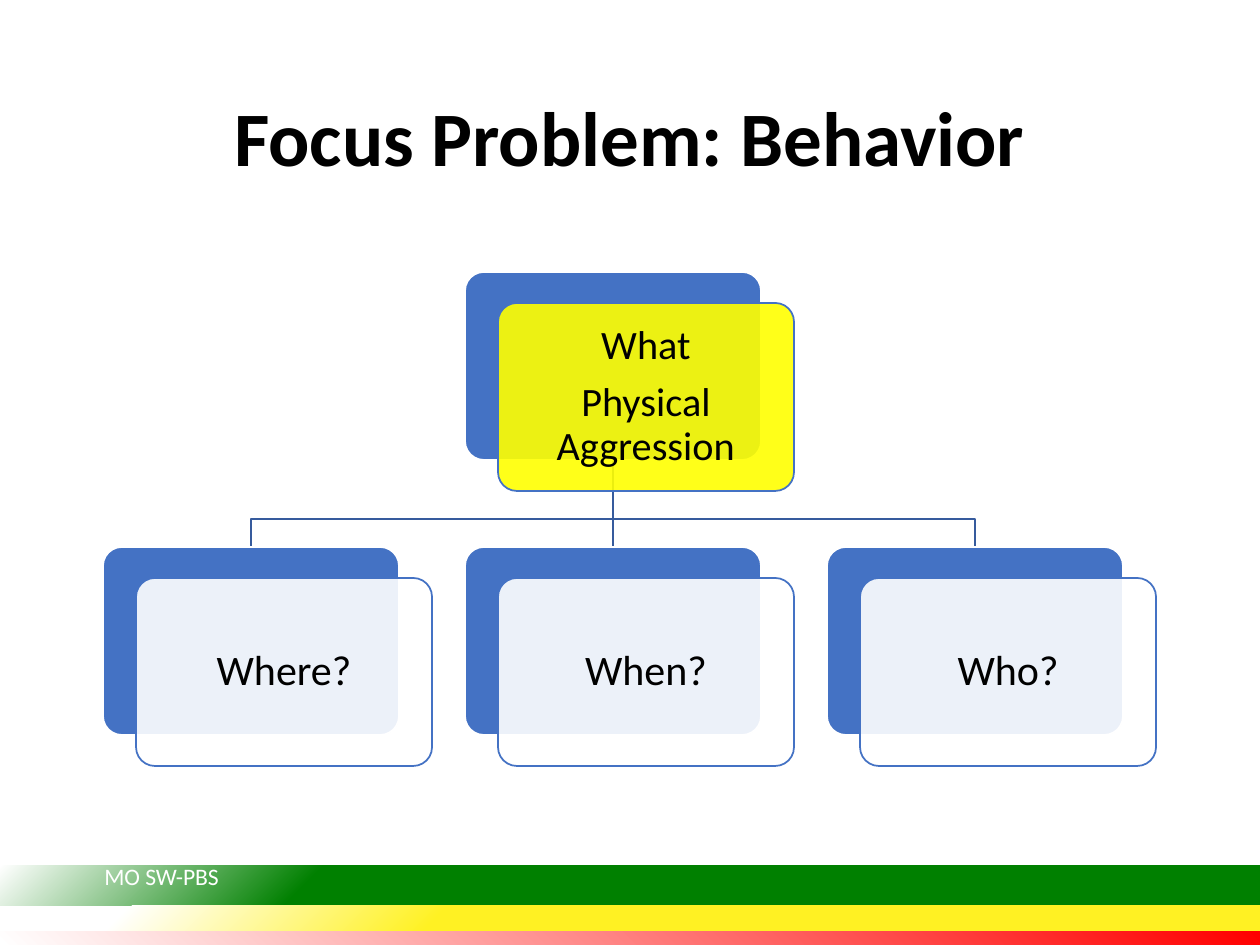
from lxml import etree
from pptx import Presentation
from pptx.dml.color import RGBColor
from pptx.enum.shapes import MSO_CONNECTOR, MSO_SHAPE
from pptx.enum.text import MSO_ANCHOR, PP_ALIGN
from pptx.oxml import parse_xml
from pptx.oxml.ns import nsdecls, qn
from pptx.util import Emu, Pt

STRAIGHT = MSO_CONNECTOR.STRAIGHT
RECTANGLE, ROUNDED = MSO_SHAPE.RECTANGLE, MSO_SHAPE.ROUNDED_RECTANGLE
CENTER, LEFT = PP_ALIGN.CENTER, PP_ALIGN.LEFT
MIDDLE = MSO_ANCHOR.MIDDLE

EMU_PER_PX = 914400 / 126
BLUE, LINK_BLUE, WHITE, BLACK, YELLOW = "4472C4", "365B9D", "FFFFFF", "000000", "FFFF00"
CARD_W, CARD_H = 296, 188
OFFSET_X, OFFSET_Y = 33, 31
LEFT_COLUMN, COLUMN_STEP = 103, 362
PARENT_TOP, BRANCH_Y, CHILD_TOP = 272, 519, 547
TOP_SITE, BOTTOM_SITE = 0, 2


def px(length):
    """Turn pixels into EMU."""
    return Emu(round(length * EMU_PER_PX))


def rgb(hex_code):
    """Turn a hex string into a colour."""
    return RGBColor.from_string(hex_code)


def write(frame, lines, size, color, align=CENTER, bold=False, spacing=None, after=None):
    """Fill a text frame with uniformly formatted paragraphs."""
    frame.text = "\n".join(lines)
    frame.word_wrap = True
    for paragraph in frame.paragraphs:
        paragraph.alignment = align
        paragraph.line_spacing = spacing
        paragraph.space_after = after
        font = paragraph.font
        font.name, font.size, font.bold = "Calibri", Pt(size), bold
        font.color.rgb = rgb(color)


def add_band(slide, top, height, color, solid_until, fade_end, focus):
    """Add a footer band fading from colour to white."""
    band = slide.shapes.add_shape(RECTANGLE, 0, px(top), px(1260), px(height))
    band.shadow.inherit = False
    band.line.fill.background()
    gradient = parse_xml(
        f'<a:gradFill {nsdecls("a")} rotWithShape="1"><a:gsLst>'
        f'<a:gs pos="{solid_until * 1000}"><a:srgbClr val="{color}"/></a:gs>'
        f'<a:gs pos="{fade_end * 1000}"><a:srgbClr val="{WHITE}"/></a:gs>'
        f'</a:gsLst><a:path path="circle"><a:fillToRect {focus}/></a:path></a:gradFill>'
    )
    band.element.spPr.find(qn("a:prstGeom")).addnext(gradient)


def add_footer(slide):
    """Add the shadowed footer label."""
    footer = slide.shapes.add_textbox(px(92), px(856), px(242), px(42))
    write(footer.text_frame, ["MO SW-PBS"], 13.5, WHITE, LEFT)
    run = footer.text_frame.paragraphs[0].runs[0]
    run._r.get_or_add_rPr().append(parse_xml(
        f'<a:effectLst {nsdecls("a")}><a:outerShdw blurRad="38100" dist="38100" dir="2700000">'
        f'<a:srgbClr val="{BLACK}"><a:alpha val="43000"/></a:srgbClr>'
        '</a:outerShdw></a:effectLst>'
    ))


def add_title(slide, text):
    """Place and format the title placeholder."""
    title = slide.shapes.title
    title.left, title.top, title.width, title.height = px(87), px(50), px(1086), px(183)
    write(title.text_frame, [text], 44, BLACK, bold=True, spacing=0.9)
    title.text_frame.vertical_anchor = MIDDLE


def add_branch(slide, parent_x, child_x):
    """Add an angled line from the parent to an outer child."""
    builder = slide.shapes.build_freeform(parent_x, PARENT_TOP + CARD_H, EMU_PER_PX)
    builder.add_line_segments(
        [(parent_x, BRANCH_Y), (child_x, BRANCH_Y), (child_x, CHILD_TOP)], close=False
    )
    branch = builder.convert_to_shape()
    branch.shadow.inherit = False
    branch.fill.background()
    branch.line.color.rgb = rgb(LINK_BLUE)
    branch.line.width = Pt(1)


def add_trunk(slide, x):
    """Add the straight line from the parent to the middle child."""
    trunk = slide.shapes.add_connector(
        STRAIGHT, px(x), px(PARENT_TOP + CARD_H), px(x), px(CHILD_TOP)
    )
    trunk.line.color.rgb = rgb(LINK_BLUE)
    trunk.line.width = Pt(1)
    etree.SubElement(trunk.element.spPr, qn("a:effectLst"))
    return trunk


def add_panel(slide, left, top, fill, outline):
    """Add one rounded panel of a card."""
    panel = slide.shapes.add_shape(ROUNDED, px(left), px(top), px(CARD_W), px(CARD_H))
    panel.adjustments[0] = 0.1
    panel.shadow.inherit = False
    panel.fill.solid()
    panel.fill.fore_color.rgb = rgb(fill)
    panel.line.color.rgb = rgb(outline)
    panel.line.width = Pt(1)
    return panel


def add_card(slide, left, top, lines, size, fill=WHITE):
    """Add a backing panel with a translucent labelled panel and return the backing."""
    backing = add_panel(slide, left, top, BLUE, WHITE)
    label = add_panel(slide, left + OFFSET_X, top + OFFSET_Y, fill, BLUE)
    fill_color = label.element.spPr.find(qn("a:solidFill")).find(qn("a:srgbClr"))
    etree.SubElement(fill_color, qn("a:alpha"), val="90000")
    frame = label.text_frame
    write(frame, lines, size, BLACK, spacing=0.9, after=Pt(8))
    frame.vertical_anchor = MIDDLE
    frame.margin_left = frame.margin_right = px(13)
    frame.margin_top = frame.margin_bottom = px(13)
    return backing


def add_hierarchy(slide):
    """Add the problem card, its three question cards and their links."""
    columns = [LEFT_COLUMN + COLUMN_STEP * i for i in range(3)]
    left_x, middle_x, right_x = [column + CARD_W // 2 for column in columns]
    add_branch(slide, middle_x, right_x)
    trunk = add_trunk(slide, middle_x)
    add_branch(slide, middle_x, left_x)
    problem = add_card(
        slide, columns[1], PARENT_TOP, ["What", "Physical Aggression"], 23, YELLOW
    )
    questions = [
        add_card(slide, column, CHILD_TOP, [question], 24)
        for column, question in zip(columns, ["Where?", "When?", "Who?"])
    ]
    trunk.begin_connect(problem, BOTTOM_SITE)
    trunk.end_connect(questions[1], TOP_SITE)


def main():
    """Build and save the slide."""
    presentation = Presentation()
    presentation.slide_width, presentation.slide_height = px(1260), px(945)
    slide = presentation.slides.add_slide(presentation.slide_layouts[5])
    add_band(slide, 931, 15, "FF0000", 0, 100, 'l="100000" b="100000"')
    add_band(slide, 866, 40, "008000", 75, 100, 'l="100000" t="100000"')
    add_band(slide, 906, 25, "FFF123", 65, 90, 'l="100000" t="100000"')
    add_footer(slide)
    add_title(slide, "Focus Problem: Behavior")
    add_hierarchy(slide)
    presentation.save("out.pptx")


if __name__ == "__main__":
    main()
